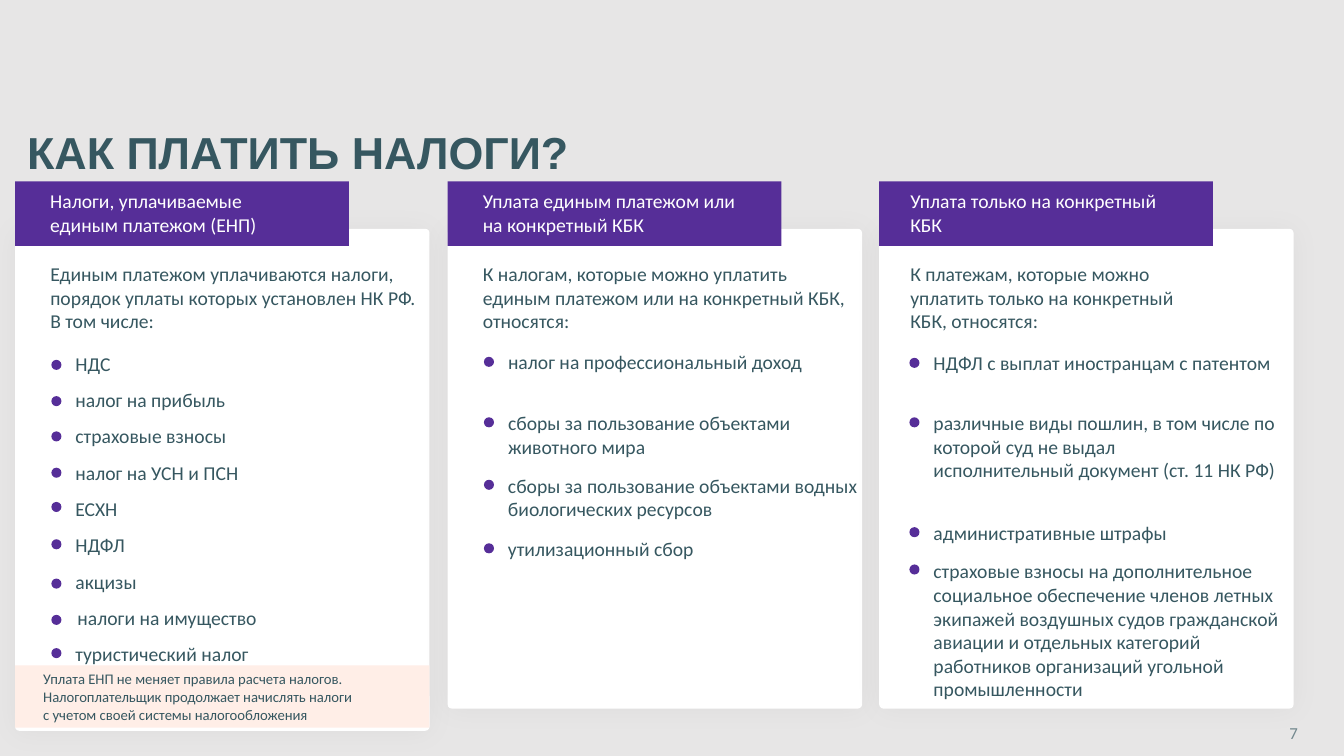
from collections import namedtuple

from lxml import etree
from pptx import Presentation
from pptx.dml.color import RGBColor
from pptx.enum.shapes import MSO_SHAPE
from pptx.oxml.ns import qn
from pptx.util import Pt

PX = 9144
RECT = MSO_SHAPE.RECTANGLE
ROUNDED = MSO_SHAPE.ROUNDED_RECTANGLE
OVAL = MSO_SHAPE.OVAL

GREY = RGBColor(0xE7, 0xE6, 0xE6)
WHITE = RGBColor(0xFF, 0xFF, 0xFF)
PURPLE = RGBColor(0x56, 0x2E, 0x98)
TEAL = RGBColor(0x36, 0x57, 0x60)
PEACH = RGBColor(0xFF, 0xEE, 0xE7)

Box = namedtuple("Box", "left top width height")
Item = namedtuple("Item", "text top dot_drop width height nudge spacing",
                  defaults=(0, None))
Column = namedtuple("Column", "box heading intro indent item_indent items")

SINGLE_TAXES = [
    ("налог на прибыль", 13, 194, 0),
    ("страховые взносы", 12, 282, 0),
    ("налог на УСН и ПСН", 12, 244, 0),
    ("ЕСХН", 10, 214, 0),
    ("НДФЛ", 11, 126, 0),
    ("акцизы", 14, 101, 0),
    ("налоги на имущество", 14, 325, 2),
    ("туристический налог", 11, 237, 0),
]

COLUMNS = [
    Column(
        Box(15, 180, 411, 545),
        "Налоги, уплачиваемые\nединым платежом (ЕНП)",
        "Единым платежом уплачиваются налоги, порядок уплаты которых "
        "установлен НК РФ. В том числе:",
        25, 50,
        [Item("НДС", 167, 10, 89, 31, spacing=0.9)] + [
            Item(text, 200 + 36 * row, drop, width, 34, nudge)
            for row, (text, drop, width, nudge) in enumerate(SINGLE_TAXES)
        ],
    ),
    Column(
        Box(444, 180, 411, 523),
        "Уплата единым платежом или на конкретный КБК",
        "К налогам, которые можно уплатить единым платежом или на конкретный "
        "КБК, относятся:",
        25, 50,
        [
            Item("налог на профессиональный доход", 165, 9, 339, 53, spacing=0.9),
            Item("сборы за пользование объектами животного мира",
                 223, 11, 348, 57),
            Item("сборы за пользование объектами водных биологических ресурсов",
                 285, 11, 376, 57),
            Item("утилизационный сбор", 348, 11, 376, 34),
        ],
    ),
    Column(
        Box(872, 180, 411, 523),
        "Уплата только на конкретный КБК",
        "К платежам, которые можно\nуплатить только на конкретный\n"
        "КБК, относятся:",
        21, 44,
        [
            Item("НДФЛ с выплат иностранцам с патентом",
                 166, 9, 368, 53, spacing=0.9),
            Item(["различные виды пошлин, в том числе по которой суд не выдал",
                  "исполнительный документ (ст. 11 НК РФ)"], 223, 11, 368, 104),
            Item("административные штрафы", 332, 11, 368, 34),
            Item("страховые взносы на дополнительное социальное обеспечение "
                 "членов летных экипажей воздушных судов гражданской авиации и "
                 "отдельных категорий работников организаций угольной "
                 "промышленности", 370, 10, 368, 175),
        ],
    ),
]


def add_text(slide, box, text, size=14, color=TEAL, font="Calibri",
             bold=False, wrap=True, spacing=None):
    frame = slide.shapes.add_textbox(*(PX * n for n in box)).text_frame
    frame.word_wrap = wrap
    lines = [text] if isinstance(text, str) else text
    for index, line in enumerate(lines):
        paragraph = frame.add_paragraph() if index else frame.paragraphs[0]
        paragraph.text = line
        paragraph.font.size = Pt(size)
        paragraph.font.name = font
        paragraph.font.bold = bold
        paragraph.font.color.rgb = color
        if spacing:
            paragraph.line_spacing = spacing
    return frame


def add_block(slide, kind, box, color):
    block = slide.shapes.add_shape(kind, *(PX * n for n in box))
    block.shadow.inherit = False
    block.fill.solid()
    block.fill.fore_color.rgb = color
    block.line.fill.background()
    return block


def add_soft_shadow(card):
    effects = card._element.spPr.find(qn("a:effectLst"))
    shadow = etree.SubElement(effects, qn("a:outerShdw"), blurRad=str(Pt(20)),
                              dist=str(Pt(1)), dir="5400000", rotWithShape="0")
    black = etree.SubElement(shadow, qn("a:srgbClr"), val="000000")
    etree.SubElement(black, qn("a:alpha"), val="4000")


def add_column(slide, column):
    left, top, width, height = column.box
    card = add_block(slide, ROUNDED, Box(left, top + 47, width, height - 47), WHITE)
    card.adjustments[0] = 0.01
    add_soft_shadow(card)
    add_block(slide, RECT, Box(left, top, 331, 64), PURPLE)

    text_left = left + column.indent
    add_text(slide, Box(text_left, top + 3, 276, 57), column.heading, color=WHITE)
    add_text(slide, Box(text_left, top + 75, 385, 81), column.intro)

    item_left = left + column.item_indent
    for item in column.items:
        item_top = top + item.top
        add_text(slide, Box(item_left + item.nudge, item_top, item.width, item.height),
                 item.text, spacing=item.spacing)
        add_block(slide, OVAL, Box(item_left - 14, item_top + item.dot_drop, 10, 10),
                  PURPLE)


def add_note(slide, box):
    add_block(slide, RECT, box, PEACH)
    add_text(slide, Box(box.left + 18, box.top, box.width - 29, box.height),
             "Уплата ЕНП не меняет правила расчета налогов.\n"
             "Налогоплательщик продолжает начислять налоги\n"
             "с учетом своей системы налогообложения", size=10.5)


def add_page_number(slide, box):
    frame = add_text(slide, box, "7", size=12, wrap=False)
    for color in frame._txBody.iter(qn("a:srgbClr")):
        etree.SubElement(color, qn("a:alpha"), val="65000")


def main():
    deck = Presentation()
    deck.slide_width = 1333 * PX
    deck.slide_height = 750 * PX
    slide = deck.slides.add_slide(deck.slide_layouts[6])
    slide.background.fill.solid()
    slide.background.fill.fore_color.rgb = GREY

    add_text(slide, Box(17, 125, 562, 59), "КАК ПЛАТИТЬ НАЛОГИ?", size=32,
             font="Arial", bold=True, wrap=False, spacing=0.9)
    for column in COLUMNS:
        add_column(slide, column)
    add_note(slide, Box(15, 660, 411, 62))
    add_page_number(slide, Box(1269, 712, 29, 30))
    deck.save("out.pptx")


if __name__ == "__main__":
    main()
